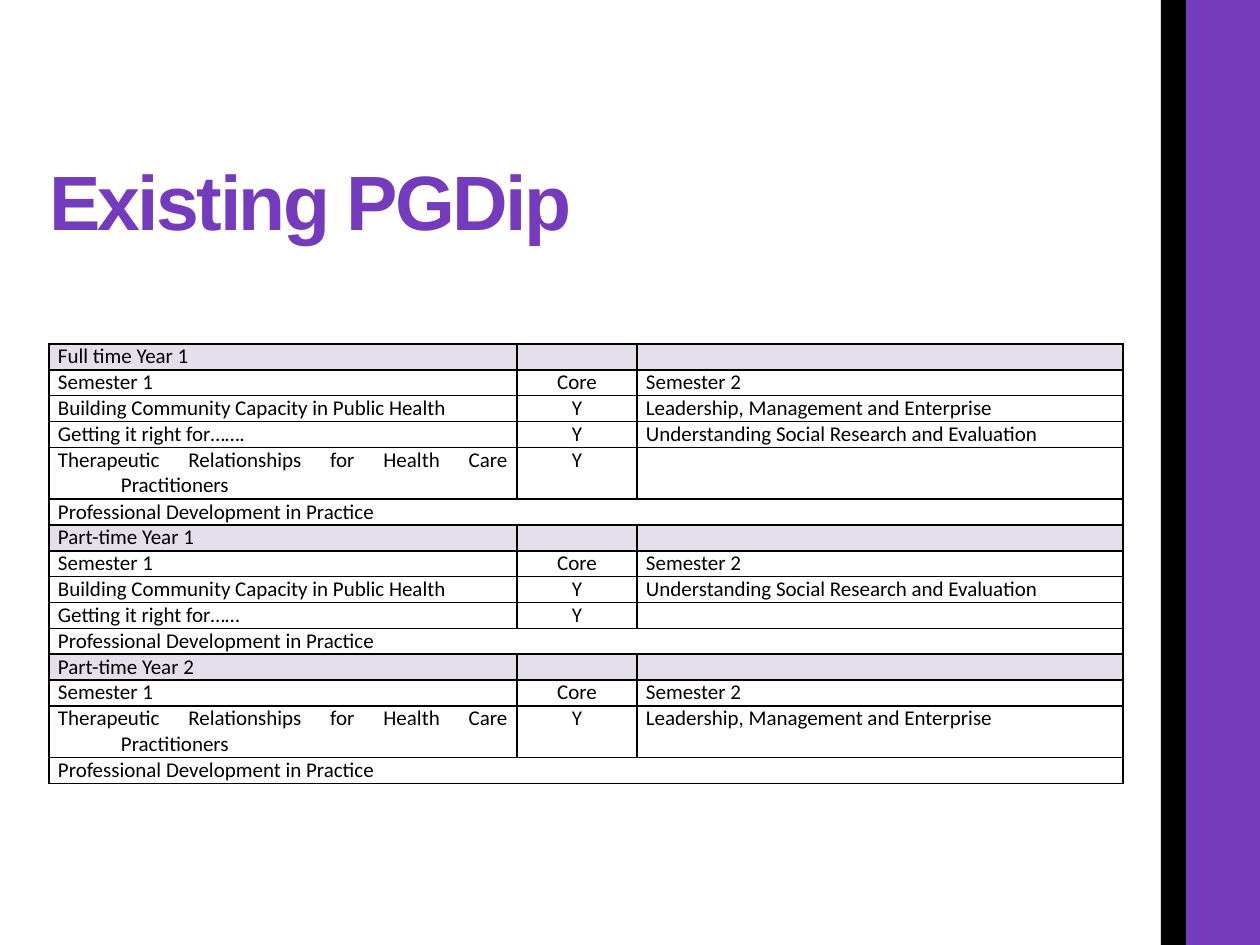
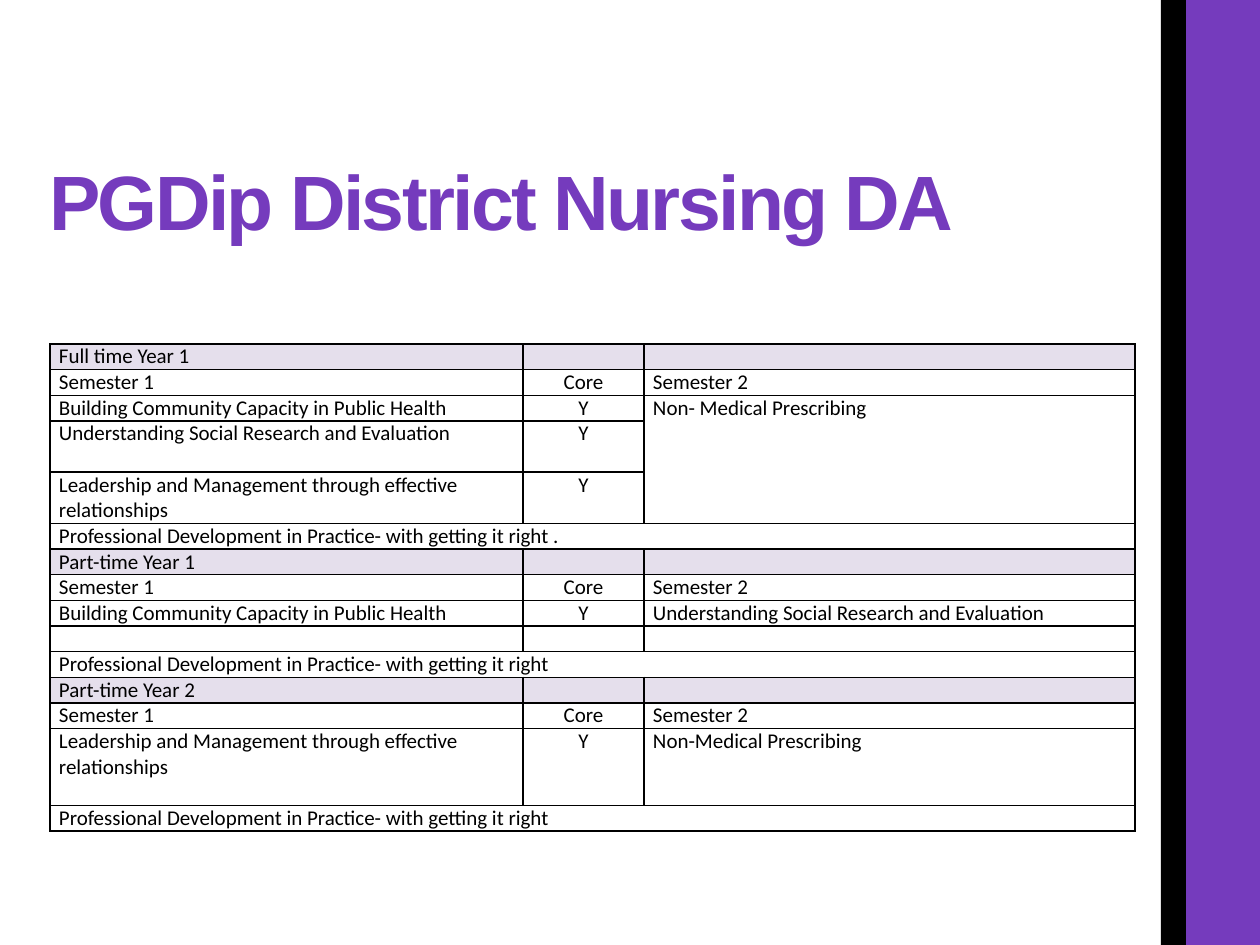
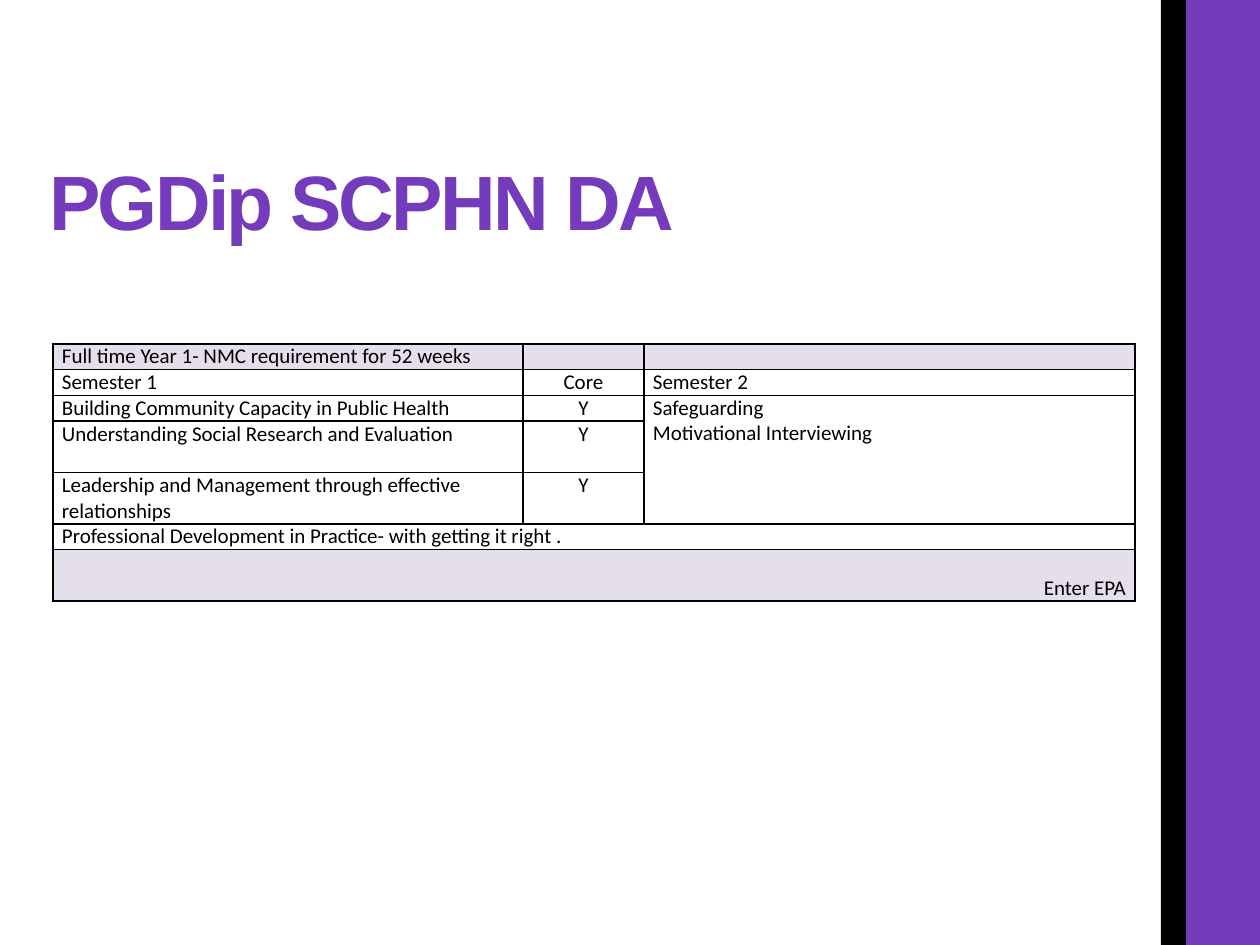
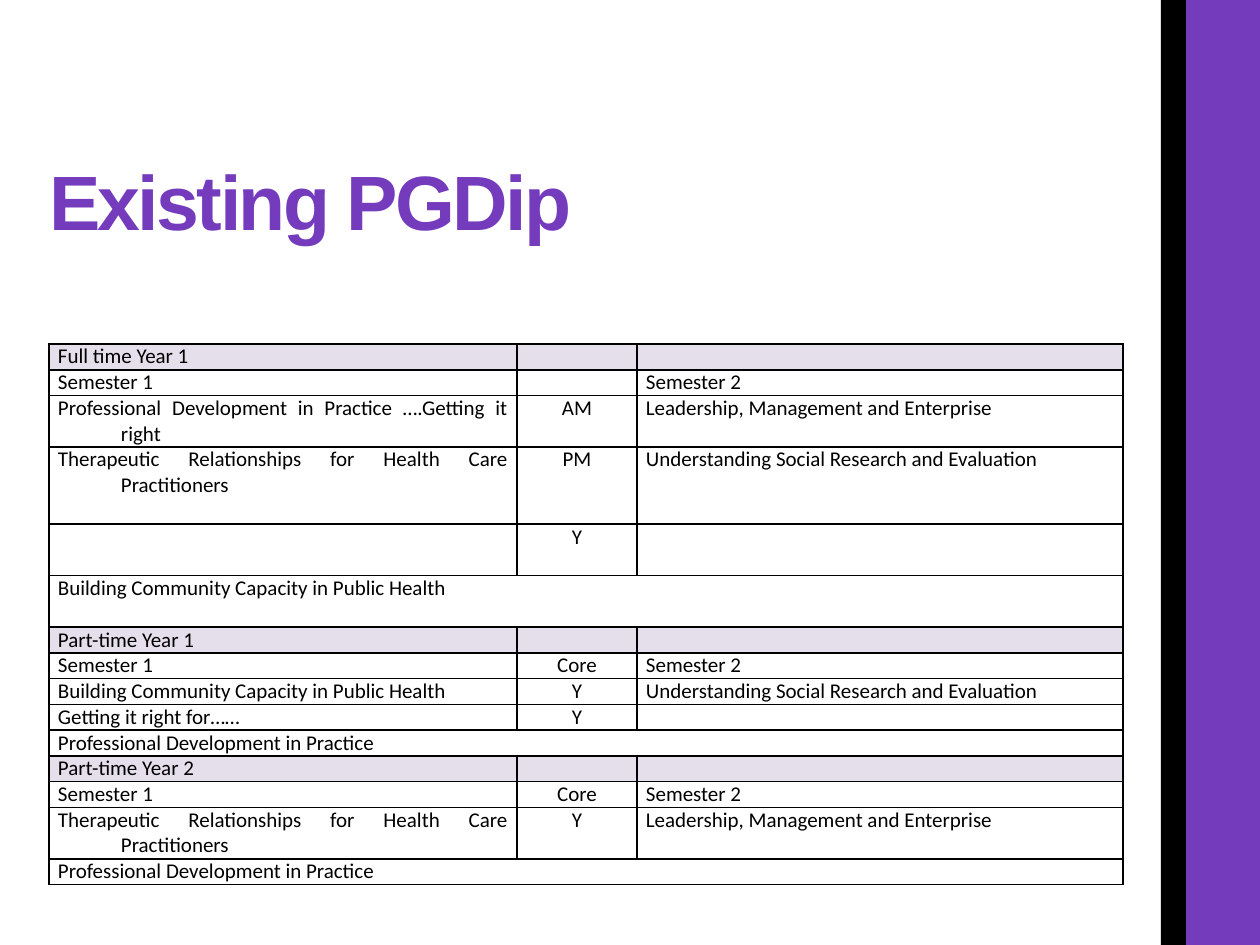
from dataclasses import dataclass

from lxml import etree
from pptx import Presentation
from pptx import util as u
from pptx.dml.color import RGBColor
from pptx.enum import shapes, text
from pptx.oxml.ns import qn


@dataclass(frozen=True)
class Theme:
    purple: str = "753BBD"
    black: str = "000000"
    lilac: str = "E5DFEC"
    title_font: str = "Arial"
    table_font: str = "Calibri"
    title_size: int = 44
    table_size: int = 12
    title_tracking: int = -150
    border_width: int = 1


@dataclass(frozen=True)
class Row:
    cells: tuple
    lines: int = 1
    shaded: bool = False
    down: int = 1
    closing: bool = False


def heading(name):
    return Row((name, "", ""), shaded=True)


def semesters(core="Core"):
    return Row(("Semester 1", core, "Semester 2"))


def course(first, core="Y", second="", lines=1, down=1):
    return Row((first, core, second), lines, down=down)


def across(name, lines=1):
    return Row((name, "", ""), lines)


def px(length):
    return u.Emu(round(length * 914400 / 126))


class Deck:
    def __init__(self, theme):
        self.theme = theme
        self.prs = Presentation()
        self.prs.slide_width, self.prs.slide_height = px(1260), px(945)
        self.layout = self.prs.slide_layouts[5]
        self.slide = None

    def new_slide(self, title):
        first = self.slide is None
        self.slide = self.prs.slides.add_slide(self.layout)
        if first:
            self.layout_band(1186, 74, self.theme.purple)
            self.layout_band(1161, 25, self.theme.black)
        self.title(title)

    def layout_band(self, left, width, colour):
        band = self.slide.shapes.add_shape(
            shapes.MSO_SHAPE.RECTANGLE, px(left), 0, px(width), px(945))
        band.shadow.inherit = False
        band.fill.solid()
        band.fill.fore_color.rgb = RGBColor.from_string(colour)
        band.line.fill.background()
        self.layout.shapes._spTree.append(band._element)

    def format_font(self, paragraph, name, size, colour, bold=False):
        font = paragraph.font
        font.name, font.size, font.bold = name, u.Pt(size), bold
        font.color.rgb = RGBColor.from_string(colour)

    def title(self, words):
        heading_box = self.slide.shapes.title
        heading_box.left, heading_box.top = px(49), px(50)
        heading_box.width, heading_box.height = px(1060), px(197)
        frame = heading_box.text_frame
        frame.text = words
        frame.word_wrap = True
        frame.auto_size = text.MSO_AUTO_SIZE.NONE
        frame.vertical_anchor = text.MSO_ANCHOR.BOTTOM
        frame.margin_left = frame.margin_right = 0
        frame.margin_top = frame.margin_bottom = 0
        line = frame.paragraphs[0]
        line.alignment = text.PP_ALIGN.LEFT
        line.line_spacing = 0.9
        self.format_font(line, self.theme.title_font, self.theme.title_size,
                         self.theme.purple, True)
        line.runs[0]._r.get_or_add_rPr().set("spc", str(self.theme.title_tracking))

    def timetable(self, left, widths, height, rows):
        table = self.slide.shapes.add_table(
            len(rows), len(widths), px(left), px(344), px(sum(widths)), px(height)).table
        table.first_row = table.horz_banding = False
        for column, width in zip(table.columns, widths):
            column.width = px(width)
        total_lines = sum(row.lines for row in rows)
        for index, row in enumerate(rows):
            table.rows[index].height = px(height * row.lines / total_lines)
            if not row.shaded and not any(row.cells[1:]) or row.closing:
                table.cell(index, 0).merge(table.cell(index, 2))
            if row.down > 1:
                table.cell(index, 2).merge(table.cell(index + row.down - 1, 2))
            for place, words in enumerate(row.cells):
                self.cell(table.cell(index, place), words, place, row)

    def cell(self, cell, words, place, row):
        cell.text = words
        cell.margin_left = cell.margin_right = px(9)
        cell.margin_top = cell.margin_bottom = 0
        cell.vertical_anchor = (
            text.MSO_ANCHOR.BOTTOM if row.closing else text.MSO_ANCHOR.TOP)
        self.borders(cell)
        if row.shaded:
            cell.fill.solid()
            cell.fill.fore_color.rgb = RGBColor.from_string(self.theme.lilac)
        else:
            cell.fill.background()
        for paragraph in cell.text_frame.paragraphs:
            properties = paragraph._p.get_or_add_pPr()
            properties.set("marL", str(px(63)))
            properties.set("indent", str(-px(63)))
            if row.closing:
                paragraph.alignment = text.PP_ALIGN.RIGHT
            elif place == 1:
                paragraph.alignment = text.PP_ALIGN.CENTER
            else:
                paragraph.alignment = text.PP_ALIGN.JUSTIFY
            self.format_font(paragraph, self.theme.table_font,
                             self.theme.table_size, self.theme.black)
            if not words:
                etree.SubElement(paragraph._p, qn("a:endParaRPr"),
                                 sz=str(self.theme.table_size * 100))

    def borders(self, cell):
        properties = cell._tc.get_or_add_tcPr()
        for side in "LRTB":
            edge = etree.SubElement(properties, qn(f"a:ln{side}"),
                                    w=str(u.Pt(self.theme.border_width)))
            fill = etree.SubElement(edge, qn("a:solidFill"))
            etree.SubElement(fill, qn("a:srgbClr"), val=self.theme.black)


CAPACITY = "Building Community Capacity in Public Health"
RESEARCH = "Understanding Social Research and Evaluation"
ENTERPRISE = "Leadership, Management and Enterprise"
THERAPEUTIC = "Therapeutic Relationships for Health Care Practitioners"
LEADERSHIP = "Leadership and Management through effective\nrelationships"
PRACTICE = "Professional Development in Practice"
PRACTICE_RIGHT = PRACTICE + "- with getting it right"

EXISTING_PART_TIME = [
    heading("Part-time Year 1"),
    semesters(),
    course(CAPACITY, second=RESEARCH),
    course("Getting it right for……"),
    across(PRACTICE),
    heading("Part-time Year 2"),
    semesters(),
    course(THERAPEUTIC, second=ENTERPRISE, lines=2),
    across(PRACTICE),
]


def full_time_da(second):
    return [
        semesters(),
        course(CAPACITY, second=second, down=3),
        course(RESEARCH, lines=2),
        course(LEADERSHIP, lines=2),
        across(PRACTICE_RIGHT + " ."),
    ]


def main():
    deck = Deck(Theme())
    existing_widths = (468, 120, 486)

    deck.new_slide("Existing PGDip")
    deck.timetable(49, existing_widths, 440, [
        heading("Full time Year 1"),
        semesters(),
        course(CAPACITY, second=ENTERPRISE),
        course("Getting it right for…….", second=RESEARCH),
        course(THERAPEUTIC, lines=2),
        across(PRACTICE),
        *EXISTING_PART_TIME,
    ])

    deck.new_slide("PGDip District Nursing DA")
    deck.timetable(50, (473, 121, 491), 487, [
        heading("Full time Year 1"),
        *full_time_da("Non- Medical Prescribing"),
        heading("Part-time Year 1"),
        semesters(),
        course(CAPACITY, second=RESEARCH),
        course("", core=" "),
        across(PRACTICE_RIGHT),
        heading("Part-time Year 2"),
        semesters(),
        course(LEADERSHIP, second="Non-Medical Prescribing", lines=3),
        across(PRACTICE_RIGHT),
    ])

    deck.new_slide("PGDip SCPHN DA")
    deck.timetable(53, (470, 121, 491), 257, [
        heading("Full time Year 1- NMC requirement for 52 weeks"),
        *full_time_da("Safeguarding\nMotivational Interviewing"),
        Row(("Enter EPA", "", ""), lines=2, shaded=True, closing=True),
    ])

    deck.new_slide("Existing PGDip")
    deck.timetable(49, existing_widths, 541, [
        heading("Full time Year 1"),
        semesters(core=""),
        course(PRACTICE + " ….Getting it right", "AM", ENTERPRISE, lines=2),
        course(THERAPEUTIC, "PM", RESEARCH, lines=3),
        course("", lines=2),
        across(CAPACITY, lines=2),
        *EXISTING_PART_TIME,
    ])

    deck.prs.save("out.pptx")


if __name__ == "__main__":
    main()
